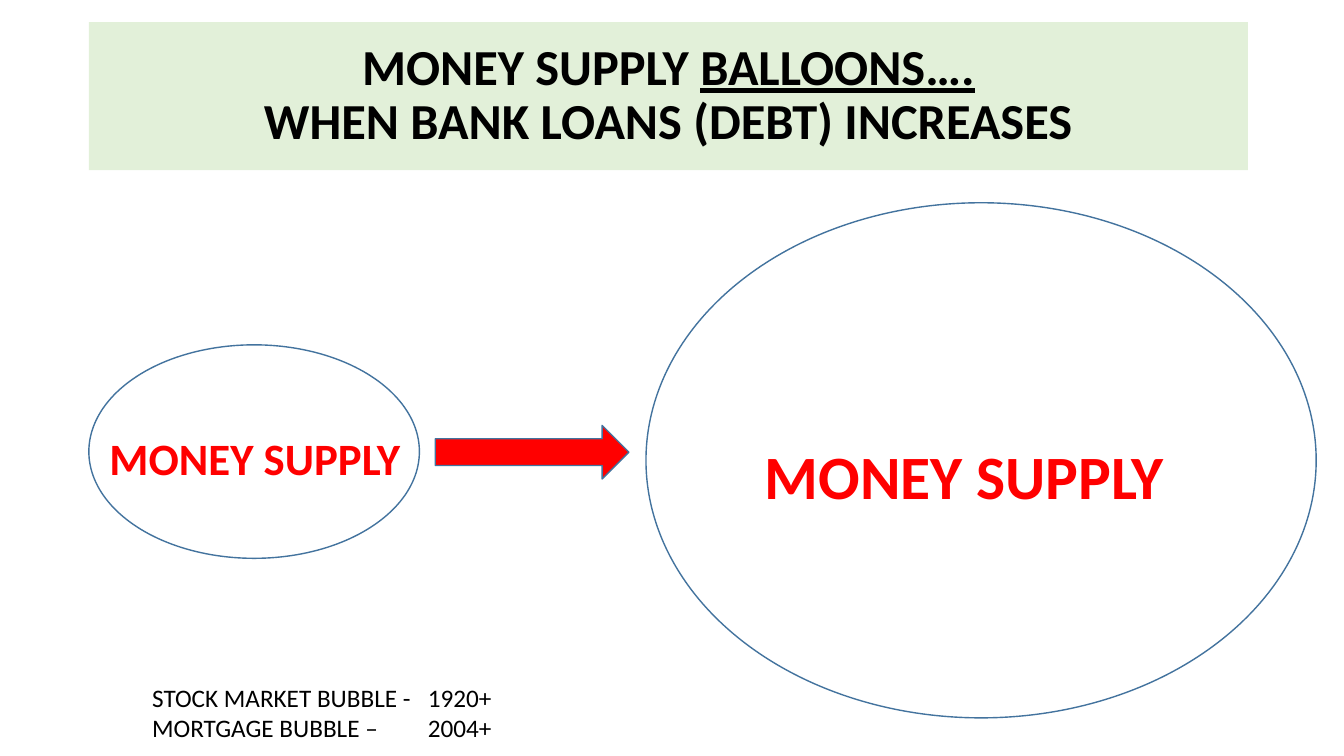
from dataclasses import dataclass

from lxml import etree
from pptx import Presentation
from pptx import util as u
from pptx.dml.color import RGBColor
from pptx.enum import shapes, text
from pptx.oxml import ns

FONT = "Calibri"
COLORS = {
    "banner": "E2F0D9",
    "outline": "43739E",
    "accent": "FF0000",
    "ink": "000000",
}


@dataclass(frozen=True)
class Box:
    left: float
    top: float
    width: float
    height: float

    def lengths(self) -> tuple:
        return tuple(u.Cm(v) for v in (self.left, self.top, self.width, self.height))


@dataclass(frozen=True)
class Supply:
    oval: Box
    caption: Box
    size: int


@dataclass(frozen=True)
class Column:
    box: Box
    lines: tuple[str, ...]


TITLE_BOX = Box(2.24, 0.56, 29.21, 3.73)
ARROW_BOX = Box(10.97, 10.72, 4.88, 1.35)

SUPPLIES = [
    Supply(Box(2.24, 8.69, 8.33, 5.38), Box(2.51, 10.72, 8.1, 1.63), 32),
    Supply(Box(16.28, 5.11, 16.89, 12.98), Box(19.02, 10.9, 11.38, 2.13), 44),
]
BUBBLE_COLUMNS = [
    Column(Box(3.58, 17.07, 6.95, 1.8), ("STOCK MARKET BUBBLE -", "MORTGAGE BUBBLE –")),
    Column(Box(10.53, 17.07, 2.35, 1.8), ("1920+", "2004+")),
]


def rgb(name: str) -> RGBColor:
    return RGBColor.from_string(COLORS[name])


def place(shape, box: Box) -> None:
    shape.left, shape.top, shape.width, shape.height = box.lengths()


def add_run(paragraph, words: str, *, size: int, color: str = "ink",
            bold: bool = False, underline: bool = False) -> None:
    run = paragraph.add_run()
    run.text = words
    font = run.font
    font.name, font.size = FONT, u.Pt(size)
    font.bold, font.underline = bold, underline
    font.color.rgb = rgb(color)


def set_frame(frame, anchor) -> None:
    frame.word_wrap = True
    frame.auto_size = text.MSO_AUTO_SIZE.NONE
    frame.vertical_anchor = anchor


def add_outlined(slide, kind, box: Box, fill: str | None = None) -> None:
    shape = slide.shapes.add_shape(kind, *box.lengths())
    shape.shadow.inherit = False
    if fill:
        shape.fill.solid()
        shape.fill.fore_color.rgb = rgb(fill)
    else:
        shape.fill.background()
    shape.line.color.rgb = rgb("outline")
    shape.line.width = u.Pt(1)


def add_supply(slide, supply: Supply) -> None:
    add_outlined(slide, shapes.MSO_SHAPE.OVAL, supply.oval)
    caption = slide.shapes.add_textbox(*supply.caption.lengths())
    set_frame(caption.text_frame, text.MSO_ANCHOR.TOP)
    add_run(caption.text_frame.paragraphs[0], "MONEY SUPPLY",
            size=supply.size, color="accent", bold=True)


def fill_title(title) -> None:
    place(title, TITLE_BOX)
    title.fill.solid()
    title.fill.fore_color.rgb = rgb("banner")
    frame = title.text_frame
    set_frame(frame, text.MSO_ANCHOR.MIDDLE)
    effect, cause = frame.paragraphs[0], frame.add_paragraph()
    for line in (effect, cause):
        line.alignment = text.PP_ALIGN.CENTER
        line.line_spacing = 0.9
        line.space_before = u.Pt(0)
    add_run(effect, "MONEY SUPPLY ", size=36, bold=True)
    add_run(effect, "BALLOONS….", size=36, bold=True, underline=True)
    add_run(cause, "WHEN BANK LOANS (DEBT) INCREASES", size=36, bold=True)


def drop_bullet(paragraph) -> None:
    properties = paragraph._p.get_or_add_pPr()
    properties.set("marL", "0")
    properties.set("indent", "0")
    etree.SubElement(properties, ns.qn("a:buNone"))


def fill_column(body, column: Column) -> None:
    place(body, column.box)
    frame = body.text_frame
    set_frame(frame, text.MSO_ANCHOR.TOP)
    frame.margin_right = 0
    for index, words in enumerate(column.lines):
        line = frame.add_paragraph() if index else frame.paragraphs[0]
        line.space_before = u.Pt(0)
        drop_bullet(line)
        add_run(line, words, size=18)


def main() -> None:
    deck = Presentation()
    deck.slide_width, deck.slide_height = u.Cm(33.87), u.Cm(19.05)
    slide = deck.slides.add_slide(deck.slide_layouts[3])
    fill_title(slide.shapes.title)
    for index, column in enumerate(BUBBLE_COLUMNS, start=1):
        fill_column(slide.placeholders[index], column)
    for supply in SUPPLIES:
        add_supply(slide, supply)
    add_outlined(slide, shapes.MSO_SHAPE.RIGHT_ARROW, ARROW_BOX, fill="accent")
    deck.save("out.pptx")


if __name__ == "__main__":
    main()
